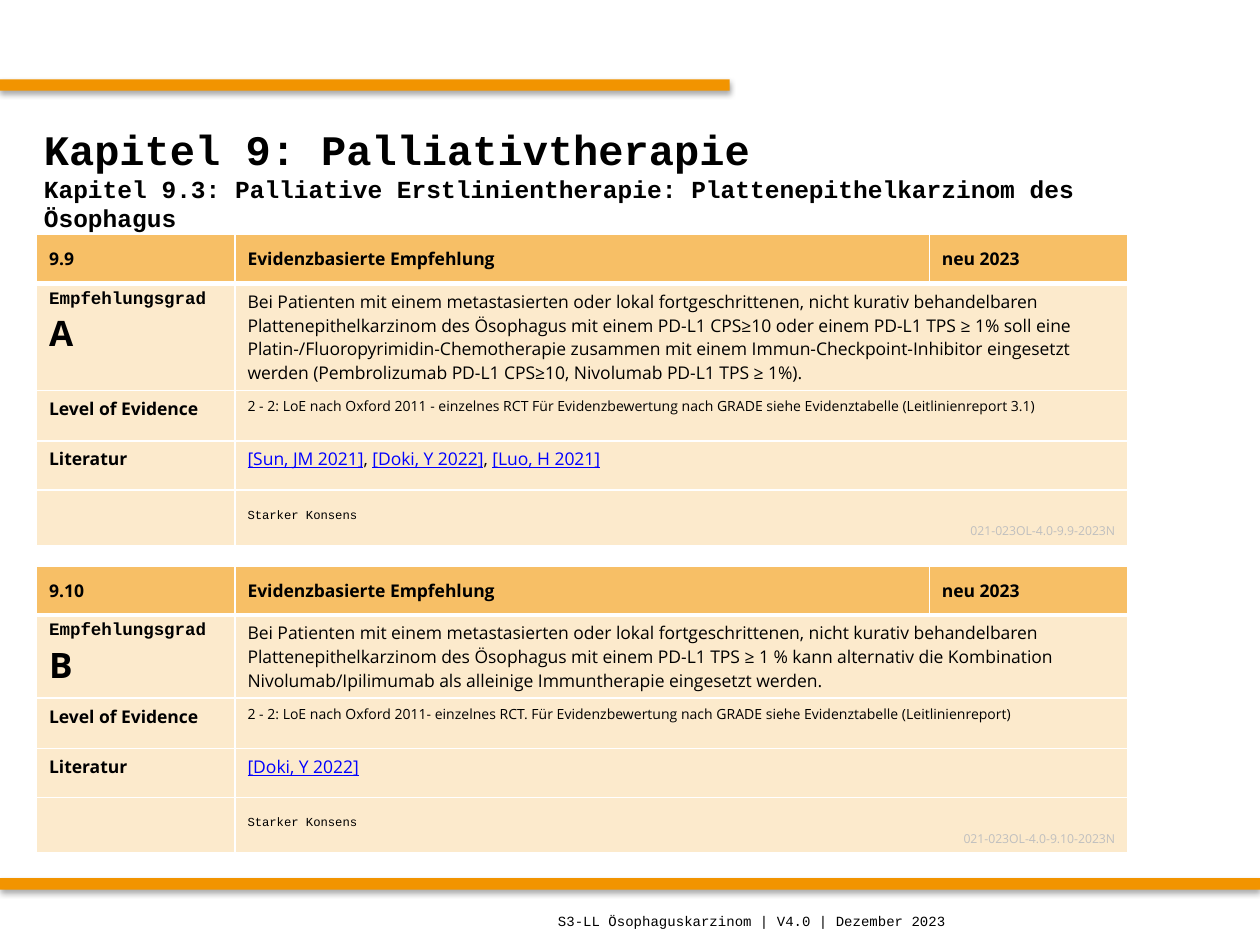
from lxml.etree import SubElement
from pptx import Presentation
from pptx.dml.color import RGBColor
from pptx.enum.shapes import MSO_SHAPE
from pptx.enum.text import MSO_ANCHOR, PP_ALIGN
from pptx.oxml import parse_xml
from pptx.oxml.ns import nsdecls, qn
from pptx.util import Inches, Pt

WIDTH, HEIGHT = Inches(10), Inches(7.5)
COLUMN, ROW = WIDTH / 100, HEIGHT / 75
ORANGE, HEADER_FILL, BODY_FILL = "F29400", "F7BF66", "FCEACC"
COLUMN_SHARES = (2, 7, 2)

BODY = {"name": "Open Sans", "size": Pt(10), "bold": False, "color": "000000"}
LABEL = {**BODY, "bold": True}
GRADE_LABEL = {**LABEL, "name": "Courier New"}
GRADE = {**LABEL, "size": Pt(20)}
EVIDENCE = {**BODY, "size": Pt(8)}
CITATION = {**BODY, "color": "0000FF", "underline": True}
CONSENSUS = {**BODY, "name": "Courier New", "size": Pt(7)}
CODE = {**BODY, "size": Pt(7), "color": "BFBFBF"}
TITLE = {**GRADE_LABEL, "size": Pt(24)}
SUBTITLE = {**TITLE, "size": Pt(14)}
FOOTER = {**CONSENSUS, "size": Pt(8)}

RECOMMENDATIONS = [
    {
        "box": (2.9, 18.6, 86.6),
        "rows": (3.9, 8.5, 4, 3.9, 4.4),
        "number": "9.9",
        "grade": "A",
        "text": "Bei Patienten mit einem metastasierten oder lokal fortgeschrittenen, nicht kurativ "
                "behandelbaren Plattenepithelkarzinom des Ösophagus mit einem PD-L1 CPS≥10 oder einem "
                "PD-L1 TPS ≥ 1% soll eine Platin-/Fluoropyrimidin-Chemotherapie zusammen mit einem "
                "Immun-Checkpoint-Inhibitor eingesetzt werden (Pembrolizumab PD-L1 CPS≥10, "
                "Nivolumab PD-L1 TPS ≥ 1%).",
        "evidence": "2 - 2: LoE nach Oxford 2011 - einzelnes RCT Für Evidenzbewertung nach GRADE "
                    "siehe Evidenztabelle (Leitlinienreport 3.1)",
        "literature": ("[Sun, JM 2021]", "[Doki, Y 2022]", "[Luo, H 2021]"),
        "code": "021-023OL-4.0-9.9-2023N",
    },
    {
        "box": (2.9, 44.9, 86.6),
        "rows": (3.9, 6.6, 4, 3.9, 4.4),
        "number": "9.10",
        "grade": "B",
        "text": "Bei Patienten mit einem metastasierten oder lokal fortgeschrittenen, nicht kurativ "
                "behandelbaren Plattenepithelkarzinom des Ösophagus mit einem PD-L1 TPS ≥ 1 % kann "
                "alternativ die Kombination Nivolumab/Ipilimumab als alleinige Immuntherapie "
                "eingesetzt werden.",
        "evidence": "2 - 2: LoE nach Oxford 2011- einzelnes RCT. Für Evidenzbewertung nach GRADE "
                    "siehe Evidenztabelle (Leitlinienreport)",
        "literature": ("[Doki, Y 2022]",),
        "code": "021-023OL-4.0-9.10-2023N",
    },
]


def rgb(value):
    """Turn a hex string into a colour."""
    return RGBColor.from_string(value)


def place(left, top, width, height):
    """Turn grid columns and rows into slide lengths."""
    return [round(n) for n in (left * COLUMN, top * ROW, width * COLUMN, height * ROW)]


def write(frame, paragraphs):
    """Fill a text frame with paragraphs, each a list of (text, format) runs."""
    for index, runs in enumerate(paragraphs):
        paragraph = frame.paragraphs[0] if index == 0 else frame.add_paragraph()
        for text, style in runs:
            run = paragraph.add_run()
            run.text = text
            for key, value in style.items():
                if key == "color":
                    run.font.color.rgb = rgb(value)
                else:
                    setattr(run.font, key, value)


def add_bar(slide, box):
    """Draw an orange bar with a soft shadow below it."""
    bar = slide.shapes.add_shape(MSO_SHAPE.RECTANGLE, *place(*box))
    bar.fill.solid()
    bar.fill.fore_color.rgb = rgb(ORANGE)
    bar.line.fill.background()
    bar.shadow.inherit = False
    effects = bar._element.spPr.find(qn("a:effectLst"))
    effects.append(parse_xml(
        f'<a:outerShdw {nsdecls("a")} blurRad="40000" dist="23000" dir="5400000" rotWithShape="0">'
        '<a:srgbClr val="000000"><a:alpha val="35000"/></a:srgbClr></a:outerShdw>'))


def add_text(slide, box, paragraphs):
    """Place a wrapped, vertically centred text box."""
    frame = slide.shapes.add_textbox(*place(*box)).text_frame
    frame.word_wrap = True
    frame.vertical_anchor = MSO_ANCHOR.MIDDLE
    write(frame, paragraphs)


def style_cell(cell, fill, top, bottom):
    """Fill a cell and give it white borders."""
    cell.fill.solid()
    cell.fill.fore_color.rgb = rgb(fill)
    properties = cell._tc.get_or_add_tcPr()
    widths = {"lnL": 1, "lnR": 1, "lnT": top, "lnB": bottom}
    for index, (side, width) in enumerate(widths.items()):
        border = SubElement(properties, qn(f"a:{side}"), w=str(Pt(width)))
        color = SubElement(SubElement(border, qn("a:solidFill")), qn("a:srgbClr"))
        color.set("val", "FFFFFF")
        properties.insert(index, border)


def add_recommendation(slide, item):
    """Build one recommendation table in its box."""
    rows = item["rows"]
    frame = slide.shapes.add_table(len(rows), len(COLUMN_SHARES), *place(*item["box"], sum(rows)))
    table = frame.table
    for column, share in zip(table.columns, COLUMN_SHARES):
        column.width = round(item["box"][2] * COLUMN * share / sum(COLUMN_SHARES))
    for row, height in zip(table.rows, rows):
        row.height = round(height * ROW)

    literature = []
    for citation in item["literature"]:
        literature += [(", ", BODY)] if literature else []
        literature.append((citation, CITATION))
    contents = [
        [[[(text, LABEL)]] for text in (item["number"], "Evidenzbasierte Empfehlung", "neu 2023")],
        [[[("Empfehlungsgrad", GRADE_LABEL)], [(item["grade"], GRADE)]], [[(item["text"], BODY)]]],
        [[[("Level of Evidence", LABEL)]], [[(item["evidence"], EVIDENCE)]]],
        [[[("Literatur", LABEL)]], [literature]],
        [[], [[("Starker Konsens", CONSENSUS)], [(item["code"], CODE)]]],
    ]
    for index, row in enumerate(contents):
        for column in range(len(COLUMN_SHARES)):
            style_cell(table.cell(index, column), BODY_FILL if index else HEADER_FILL,
                       3 if index == 1 else 1, 1 if index else 3)
        if index:
            table.cell(index, 1).merge(table.cell(index, 2))
        for column, paragraphs in enumerate(row):
            cell = table.cell(index, column)
            cell.vertical_anchor = MSO_ANCHOR.TOP if index else MSO_ANCHOR.MIDDLE
            write(cell.text_frame, paragraphs)

    consensus = table.cell(len(rows) - 1, 1)
    consensus.vertical_anchor = MSO_ANCHOR.BOTTOM
    consensus.text_frame.paragraphs[1].alignment = PP_ALIGN.RIGHT


def main():
    """Build the slide and save it."""
    deck = Presentation()
    deck.slide_width, deck.slide_height = WIDTH, HEIGHT
    slide = deck.slides.add_slide(deck.slide_layouts[6])
    for bar in ((0, 6.3, 57.9, 0.9), (0, 69.7, 100, 0.9)):
        add_bar(slide, bar)
    add_text(slide, (2.5, 8.3, 95, 11.7), [
        [("Kapitel 9: Palliativtherapie", TITLE)],
        [("Kapitel 9.3: Palliative Erstlinientherapie: Plattenepithelkarzinom des Ösophagus", SUBTITLE)],
    ])
    add_text(slide, (43.3, 71.1, 55.1, 3.9),
             [[("S3-LL Ösophaguskarzinom | V4.0 | Dezember 2023", FOOTER)]])
    for item in RECOMMENDATIONS:
        add_recommendation(slide, item)
    deck.save("out.pptx")


if __name__ == "__main__":
    main()
